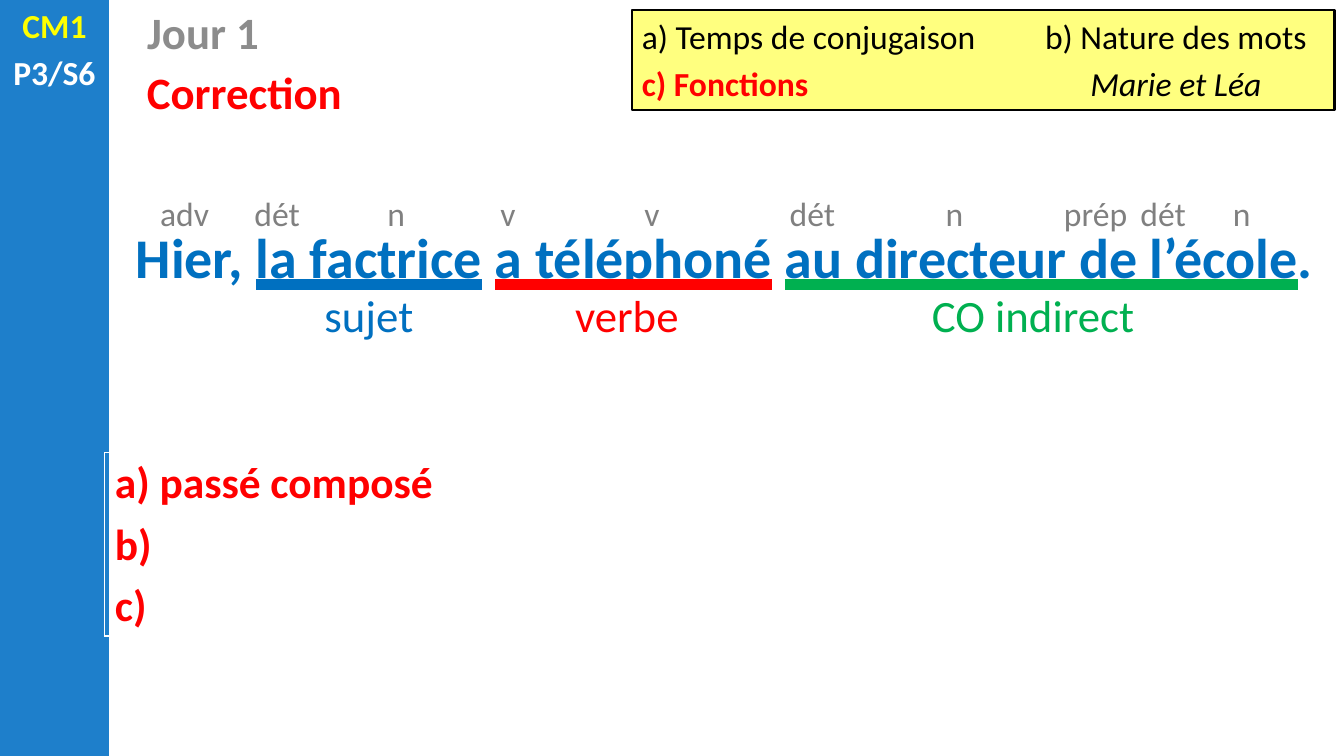
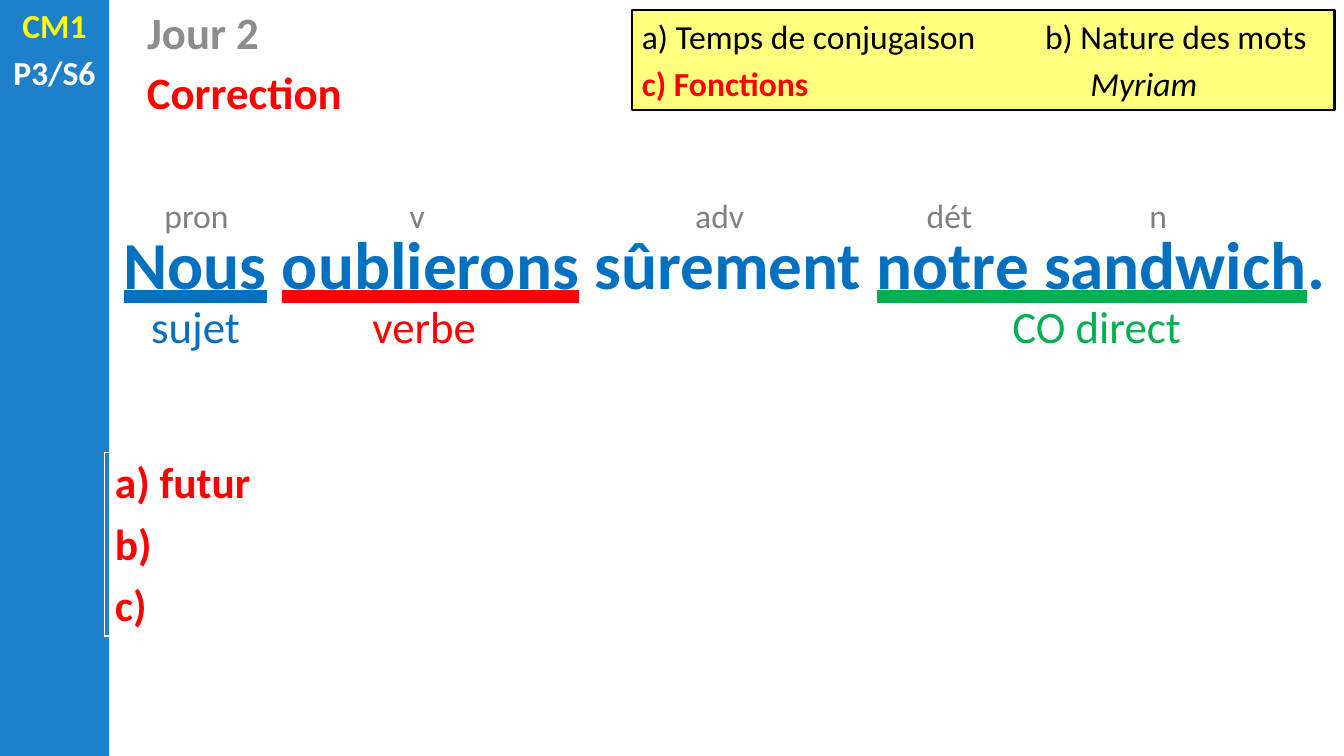
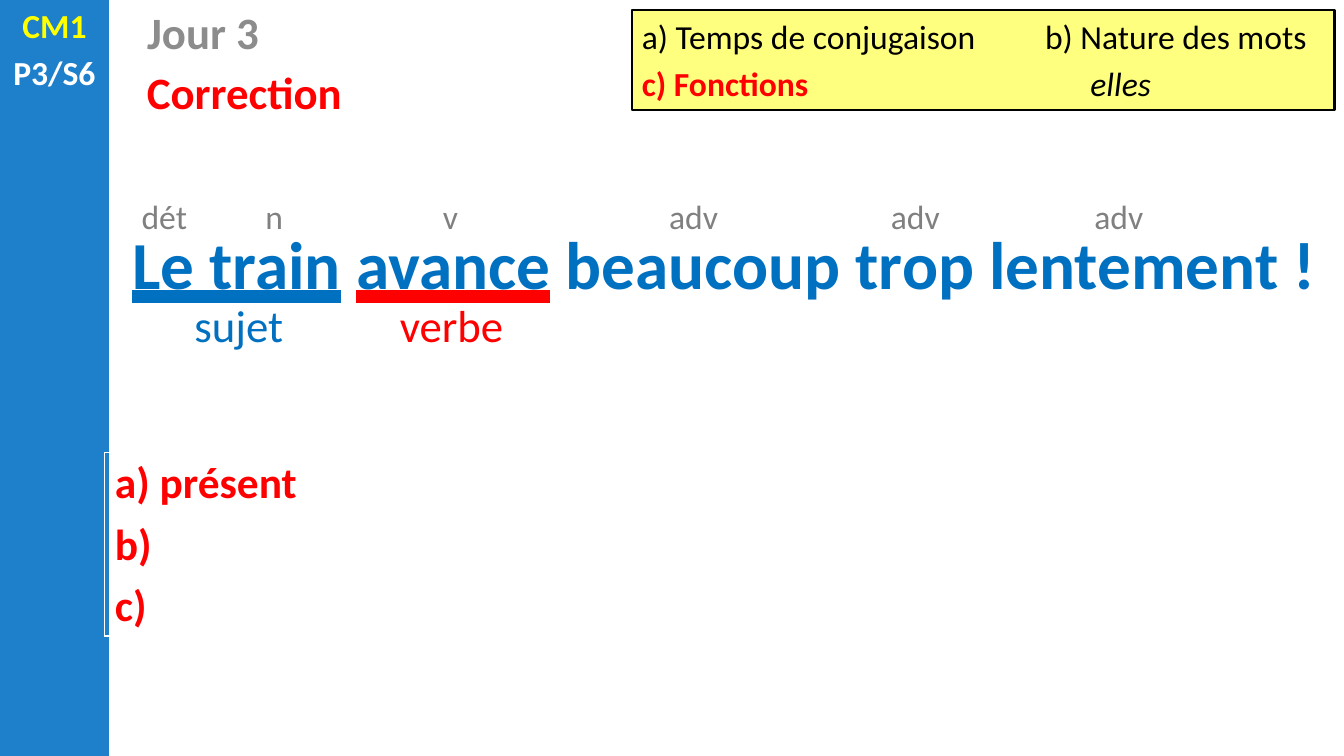
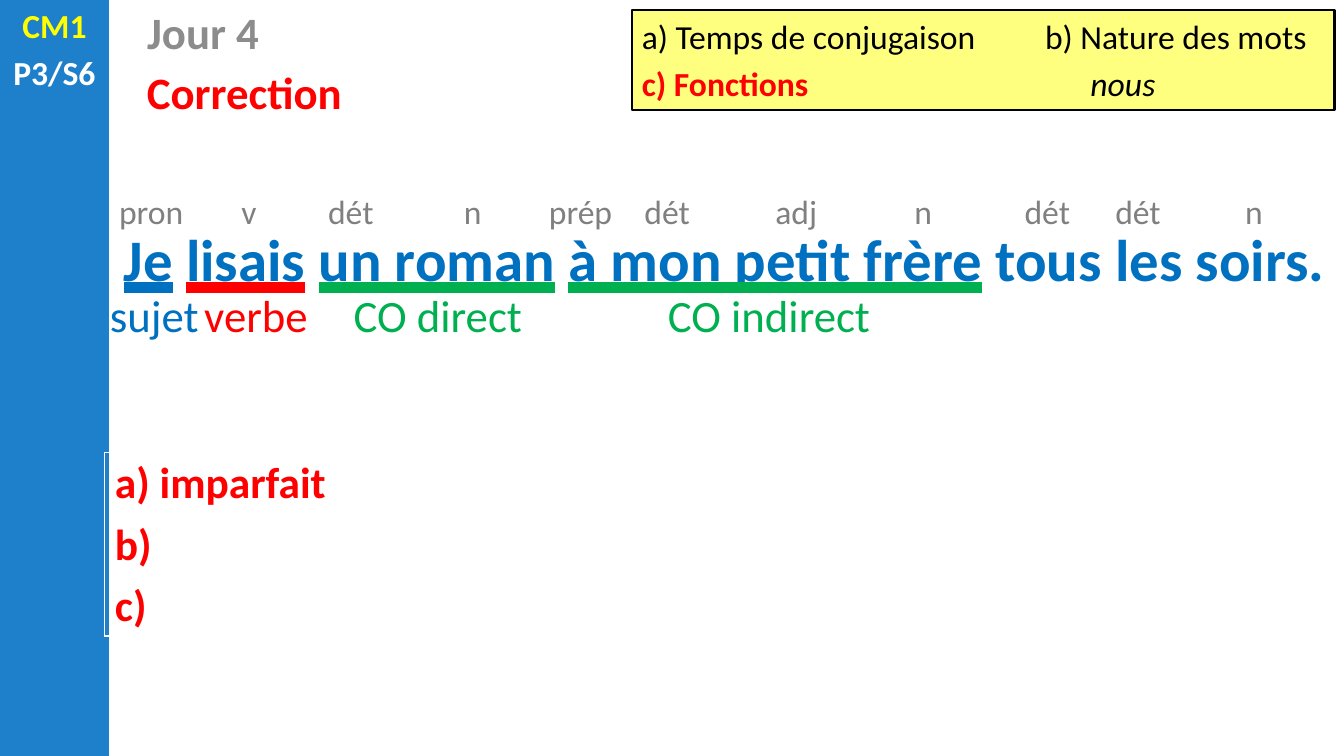
from lxml.etree import SubElement
from pptx import Presentation
from pptx.dml.color import RGBColor
from pptx.enum.shapes import MSO_SHAPE
from pptx.enum.text import MSO_ANCHOR, MSO_AUTO_SIZE, MSO_UNDERLINE, PP_ALIGN
from pptx.oxml.ns import qn
from pptx.util import Pt

FONT = "Calibri"
BLUE, RED, GREEN = "0070C0", "FF0000", "00B050"
BAND, YELLOW, WHITE, BLACK = "1E7FCB", "FFFF00", "FFFFFF", "000000"
DAY_GREY, TAG_GREY = "8C8C8C", "808080"

BAND_WIDTH = 77.76
CONTENT_LEFT, CONTENT_WIDTH = 74.88, 884.88
HEADING_LEFT = 97.92
TAG_WIDTH = 64.8
# function: colour, label width
FUNCTIONS = {
    "sujet": (BLUE, 89.28),
    "verbe": (RED, 89.28),
    "CO direct": (GREEN, 166),
    "CO indirect": (GREEN, 166),
}

# Sentence parts: text, then function and label centre where there is one.
# Tags: word class and centre.
DAYS = [
    {
        "title": "Jour 1", "pupil": "Marie et Léa", "tense": "passé composé",
        "size": 40, "tag_top": 134.6, "label_top": 201.6,
        "parts": [("Hier, ",), ("la factrice", "sujet", 263.5), (" ",),
                  ("a téléphoné", "verbe", 447.8), (" ",),
                  ("au directeur de l’école", "CO indirect", 738), (".",)],
        "tags": [("adv", 131.8), ("dét", 198), ("n", 283), ("v", 362.9), ("v", 465.8),
                 ("dét", 580.3), ("n", 681.8), ("prép", 782.6), ("dét", 830.9), ("n", 887)],
    },
    {
        "title": "Jour 2", "pupil": "Myriam", "tense": "futur",
        "size": 48, "tag_top": 135.4, "label_top": 209.5,
        "parts": [("Nous", "sujet", 139.7), (" ",), ("oublierons", "verbe", 303.1),
                  (" sûrement ",), ("notre sandwich", "CO direct", 783.4), (".",)],
        "tags": [("pron", 140.4), ("v", 298.1), ("adv", 514.1), ("dét", 678.2), ("n", 827.3)],
    },
    {
        "title": "Jour 3", "pupil": "elles", "tense": "présent",
        "size": 48, "tag_top": 136.1, "label_top": 208.8,
        "parts": [("Le train", "sujet", 170.6), (" ",), ("avance", "verbe", 322.6),
                  (" beaucoup trop lentement !",)],
        "tags": [("dét", 117.4), ("n", 195.8), ("v", 321.8), ("adv", 495.4),
                 ("adv", 653.8), ("adv", 799.2)],
    },
    {
        "title": "Jour 4", "pupil": "nous", "tense": "imparfait",
        "size": 42, "tag_top": 132.5, "label_top": 202.3,
        "parts": [("Je", "sujet", 110.2), (" ",), ("lisais", "verbe", 182.9), (" ",),
                  ("un roman", "CO direct", 312.8), (" ",),
                  ("à mon petit frère", "CO indirect", 549.4), (" tous les soirs.",)],
        "tags": [("pron", 108), ("v", 177.8), ("dét", 250.6), ("n", 337.7), ("prép", 414.7),
                 ("dét", 476.6), ("adj", 568.8), ("n", 659.5), ("dét", 748.1),
                 ("dét", 812.9), ("n", 895.7)],
    },
]


def rgb(color):
    return RGBColor.from_string(color)


def style(para, size, color, bold=False, align=PP_ALIGN.LEFT):
    para.alignment = align
    para.space_before = Pt(size * 0.2)
    para.font.name = FONT
    para.font.size = Pt(size)
    para.font.bold = bold
    para.font.color.rgb = rgb(color)


def add_span(para, text):
    span = para.add_run()
    span.text = text
    return span


def add_paragraph(frame, first):
    return frame.paragraphs[0] if first else frame.add_paragraph()


def add_box(slide, left, top, width, height):
    box = slide.shapes.add_textbox(Pt(left), Pt(top), Pt(width), Pt(height))
    box.text_frame.word_wrap = True
    return box


def add_label(slide, text, left, top, width, size, color, **look):
    """One line of text in a box as high as the line."""
    box = add_box(slide, left, top, width, size * 1.22 + 7.2)
    para = box.text_frame.paragraphs[0]
    para.text = text
    style(para, size, color, **look)


def add_panel(slide, left, top, width, height, color):
    panel = slide.shapes.add_shape(
        MSO_SHAPE.RECTANGLE, Pt(left), Pt(top), Pt(width), Pt(height))
    panel.shadow.inherit = False
    panel.fill.solid()
    panel.fill.fore_color.rgb = rgb(color)
    panel.line.fill.background()
    return panel


def move_band_to_layout(slide, layout):
    """Draw the side band and keep it on the layout, for every slide."""
    band = add_panel(slide, 0, 0, BAND_WIDTH, 540, BAND)
    box = add_box(slide, 0, 0, BAND_WIDTH, 71.28)
    for index, (text, color) in enumerate([("CM1", YELLOW), ("P3/S6", WHITE)]):
        para = add_paragraph(box.text_frame, index == 0)
        para.text = text
        style(para, 24, color, bold=True, align=PP_ALIGN.CENTER)
    for shape in (band, box):
        layout.shapes.element.append(shape.element)


def set_title(slide, text):
    title = slide.shapes.title
    frame = title.text_frame
    frame.text = text
    frame.auto_size = MSO_AUTO_SIZE.NONE
    frame.vertical_anchor = MSO_ANCHOR.TOP
    style(frame.paragraphs[0], 32, DAY_GREY, bold=True)


def set_tab(para, position):
    tabs = SubElement(para._p.get_or_add_pPr(), qn("a:tabLst"))
    SubElement(tabs, qn("a:tab"), pos=str(Pt(position)), algn="l")


def add_instructions(slide, pupil):
    panel = add_panel(slide, 451.44, 7.2, 501.84, 71.28, YELLOW)
    fill_color = panel.element.spPr.find(qn("a:solidFill")).find(qn("a:srgbClr"))
    SubElement(fill_color, qn("a:alpha"), val="50000")
    panel.line.color.rgb = rgb(BLACK)
    panel.line.width = Pt(1.5)

    frame = panel.text_frame
    tasks, focus = frame.paragraphs[0], frame.add_paragraph()
    for para, tab in ((tasks, 288), (focus, 320.4)):
        set_tab(para, tab)
        style(para, 24, BLACK)
    add_span(tasks, "a) Temps de conjugaison\tb) Nature des mots")
    current = add_span(focus, "c) Fonctions\t")
    current.font.bold = True
    current.font.color.rgb = rgb(RED)
    add_span(focus, pupil).font.italic = True


def underline(span, color):
    span.font.underline = MSO_UNDERLINE.HEAVY_LINE
    fill = SubElement(span._r.get_or_add_rPr(), qn("a:uFill"))
    SubElement(SubElement(fill, qn("a:solidFill")), qn("a:srgbClr"), val=color)


def add_sentence(slide, day):
    """The sentence, its underlined groups and the label under each."""
    size = day["size"]
    box = add_box(slide, CONTENT_LEFT, 155.52, CONTENT_WIDTH, size * 1.22 + 7.2)
    para = box.text_frame.paragraphs[0]
    style(para, size, BLUE, bold=True, align=PP_ALIGN.CENTER)
    for text, *role in day["parts"]:
        span = add_span(para, text)
        if role:
            function, center = role
            color, width = FUNCTIONS[function]
            underline(span, color)
            add_label(slide, function, center - width / 2, day["label_top"], width,
                      32, color, align=PP_ALIGN.CENTER)


def add_answers(slide, tense):
    table = slide.shapes.add_table(
        1, 1, Pt(CONTENT_LEFT), Pt(323.28), Pt(CONTENT_WIDTH), Pt(131.04)).table
    table.first_row = table.horz_banding = False
    cell = table.cell(0, 0)
    cell.fill.background()
    for index, text in enumerate([f"a) {tense}", "b)", "c)"]):
        para = add_paragraph(cell.text_frame, index == 0)
        para.text = text
        style(para, 31, RED, bold=True)
        para.space_before = Pt(0)
        para.space_after = Pt(6)


def main():
    deck = Presentation()
    deck.slide_width, deck.slide_height = Pt(960), Pt(540)
    layout = deck.slide_layouts.get_by_name("Title Only")
    heading = layout.placeholders[0]
    heading.left, heading.top = Pt(HEADING_LEFT), Pt(0)
    heading.width, heading.height = Pt(569.52), Pt(46.08)

    for index, day in enumerate(DAYS):
        slide = deck.slides.add_slide(layout)
        if index == 0:
            move_band_to_layout(slide, layout)
        set_title(slide, day["title"])
        add_label(slide, "Correction", HEADING_LEFT, 42.48, 347.76, 32, RED, bold=True)
        add_instructions(slide, day["pupil"])
        add_sentence(slide, day)
        add_answers(slide, day["tense"])
        for word_class, center in day["tags"]:
            add_label(slide, word_class, center - TAG_WIDTH / 2, day["tag_top"], TAG_WIDTH,
                      24, TAG_GREY, align=PP_ALIGN.CENTER)
    deck.save("out.pptx")


if __name__ == "__main__":
    main()
